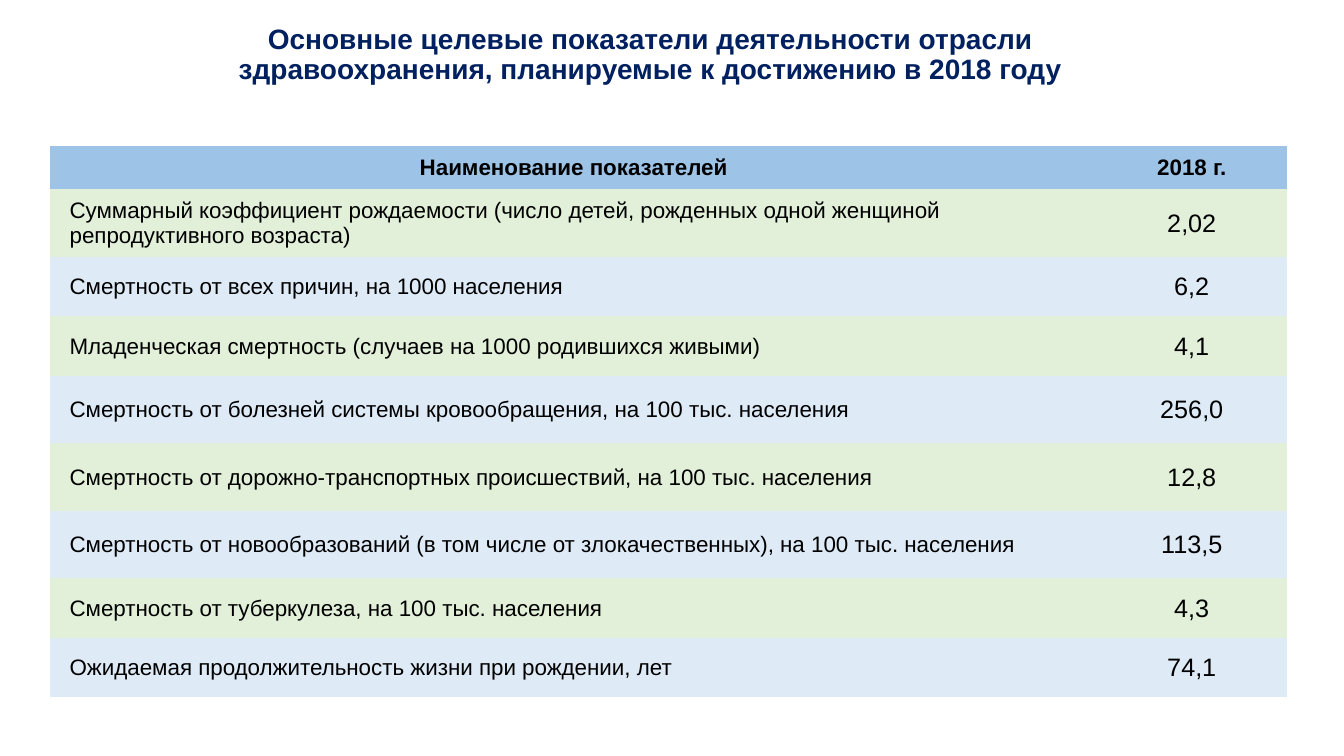
from pptx import Presentation
from pptx.dml.color import RGBColor
from pptx.enum.text import MSO_ANCHOR as Anchor, PP_ALIGN as Align
from pptx.oxml.ns import qn
from pptx.util import Inches, Pt

TITLE = ("Основные целевые показатели деятельности отрасли "
         "здравоохранения, планируемые к достижению в 2018 году")
HEADER = ("Наименование показателей", "2018 г.")
INDICATORS = [
    ("Суммарный коэффициент рождаемости (число детей, рожденных одной "
     "женщиной репродуктивного возраста)", "2,02"),
    ("Смертность от всех причин, на 1000 населения", "6,2"),
    ("Младенческая смертность (случаев на 1000 родившихся живыми)", "4,1"),
    ("Смертность от болезней системы кровообращения, на 100 тыс. населения", "256,0"),
    ("Смертность от дорожно-транспортных происшествий, на 100 тыс. населения", "12,8"),
    ("Смертность от новообразований (в том числе от злокачественных), "
     "на 100 тыс. населения", "113,5"),
    ("Смертность от туберкулеза, на 100 тыс. населения", "4,3"),
    ("Ожидаемая продолжительность жизни при рождении, лет", "74,1"),
]
COLUMN_WIDTHS = (10.38, 1.88)
ROW_HEIGHTS = (0.43, 0.67, 0.59, 0.59, 0.67, 0.67, 0.67, 0.59, 0.59)
HEADER_FILL = "9DC3E6"
BAND_FILLS = ("E2F0D9", "DEEBF7")
NO_STYLE_NO_GRID = "{2D5ABB26-0587-4C30-8999-92F81FD0307C}"


def color(hex_code):
    return RGBColor.from_string(hex_code)


def format_para(para, size, hex_code, bold, align, spacing):
    para.alignment = align
    para.line_spacing = spacing
    for span in para.runs:
        span.font.name = "Arial"
        span.font.size = Pt(size)
        span.font.bold = bold
        span.font.color.rgb = color(hex_code)


def add_title(page):
    title = page.shapes.title
    title.left, title.top = Inches(1.62), Inches(-0.04)
    title.width, title.height = Inches(9.66), Inches(1.18)
    frame = title.text_frame
    frame.text = TITLE
    frame.word_wrap = True
    frame.vertical_anchor = Anchor.MIDDLE
    format_para(frame.paragraphs[0], 20, "002060", True, Align.CENTER, 0.9)


def fill_cell(cell, text, fill, size=16, bold=False, align=Align.CENTER, indent=0):
    cell.fill.solid()
    cell.fill.fore_color.rgb = color(fill)
    cell.vertical_anchor = Anchor.MIDDLE
    cell.margin_left = cell.margin_right = cell.margin_top = cell.margin_bottom = 0
    cell.text = text
    para = cell.text_frame.paragraphs[0]
    format_para(para, size, "000000", bold, align, 1.02)
    if indent:
        para._p.get_or_add_pPr().set("marL", str(Inches(indent)))


def add_indicator_table(page):
    frame = page.shapes.add_table(
        len(ROW_HEIGHTS), len(COLUMN_WIDTHS), Inches(0.5), Inches(1.45),
        Inches(sum(COLUMN_WIDTHS)), Inches(sum(ROW_HEIGHTS)))
    table = frame.table
    table._tbl.tblPr.find(qn("a:tableStyleId")).text = NO_STYLE_NO_GRID
    for column, width in zip(table.columns, COLUMN_WIDTHS):
        column.width = Inches(width)
    for row, height in zip(table.rows, ROW_HEIGHTS):
        row.height = Inches(height)

    for index, text in enumerate(HEADER):
        fill_cell(table.cell(0, index), text, HEADER_FILL, bold=True)
    for index, (name, value) in enumerate(INDICATORS):
        fill = BAND_FILLS[index % 2]
        fill_cell(table.cell(index + 1, 0), name, fill, align=Align.LEFT, indent=0.19)
        fill_cell(table.cell(index + 1, 1), value, fill, size=18)


def main():
    deck = Presentation()
    deck.slide_width, deck.slide_height = Inches(13.33), Inches(7.5)
    page = deck.slides.add_slide(deck.slide_layouts[5])
    add_title(page)
    add_indicator_table(page)
    deck.save("out.pptx")


if __name__ == "__main__":
    main()
